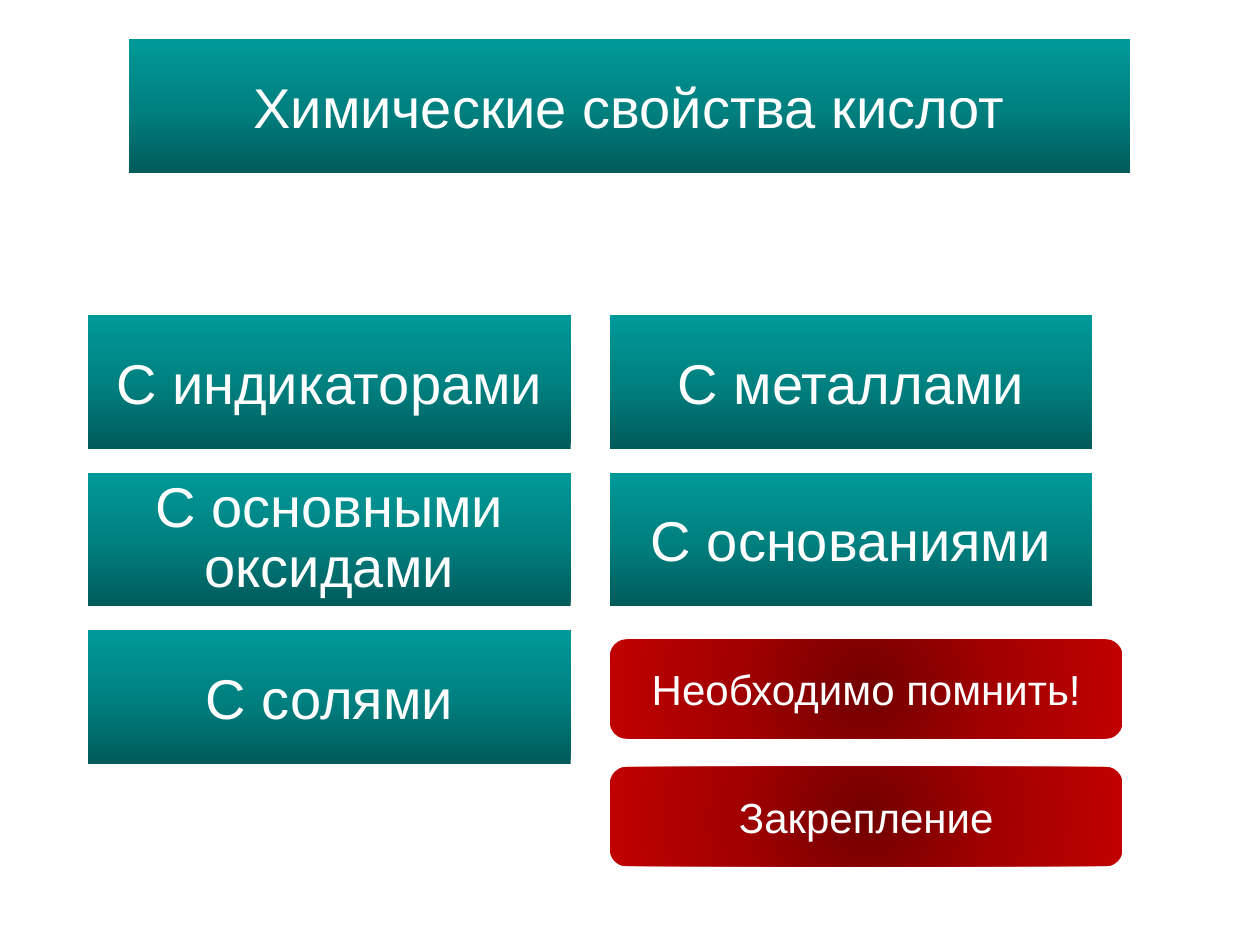
"""Build a menu slide on the chemical properties of acids."""
from pptx import Presentation, oxml, util as u
from pptx.dml.color import RGBColor
from pptx.enum import shapes, text
from pptx.oxml.ns import nsdecls

COLORS = {
    "text": "FFFFFF",
    "teal": ("005B5B", "008181", "009999"),
    "red": ("720000", "A20000", "C00000"),
}
LINEAR = '<a:lin ang="16200000" scaled="0"/>'
RADIAL = '<a:path path="circle"><a:fillToRect l="50000" t="50000" r="50000" b="50000"/></a:path>'


class MenuSlide:
    """Places panels by share of slide width and by sixths of slide height."""

    font = "Arial"
    rows = 6

    def __init__(self, deck):
        self.slide = deck.slides.add_slide(deck.slide_layouts[6])
        self.width = deck.slide_width
        self.row_height = deck.slide_height / self.rows

    def gradient(self, shape, palette, direction):
        stops = "".join(
            f'<a:gs pos="{index * 50000}"><a:srgbClr val="{color}"/></a:gs>'
            for index, color in enumerate(COLORS[palette])
        )
        fill = oxml.parse_xml(
            f'<a:gradFill {nsdecls("a")} rotWithShape="1">'
            f"<a:gsLst>{stops}</a:gsLst>{direction}</a:gradFill>"
        )
        shape._element.spPr.insert(2, fill)

    def panel(self, label, left, row, width, height, kind, palette, direction, size, spacing=None):
        shape = self.slide.shapes.add_shape(
            kind, int(left * self.width), int(row * self.row_height),
            int(width * self.width), int(height * self.row_height))
        shape.shadow.inherit = False
        shape.line.fill.background()
        self.gradient(shape, palette, direction)
        frame = shape.text_frame
        frame.text = label
        frame.word_wrap = True
        frame.vertical_anchor = text.MSO_ANCHOR.MIDDLE
        paragraph = frame.paragraphs[0]
        paragraph.alignment = text.PP_ALIGN.CENTER
        if spacing:
            paragraph.line_spacing = spacing
        font = paragraph.runs[0].font
        font.name, font.size = self.font, u.Pt(size)
        font.color.rgb = RGBColor.from_string(COLORS["text"])

    def topic(self, label, left, row, width=0.383, spacing=None):
        self.panel(label, left, row, width, 0.85, shapes.MSO_SHAPE.RECTANGLE,
                   "teal", LINEAR, 32, spacing)

    def button(self, label, left, row):
        self.panel(label, left, row, 0.407, 0.63, shapes.MSO_SHAPE.ROUNDED_RECTANGLE,
                   "red", RADIAL, 24)


def main():
    deck = Presentation()
    deck.slide_width, deck.slide_height = u.Inches(10), u.Inches(7.5)
    menu = MenuSlide(deck)
    columns = (0.07, 0.484)
    reactions = (
        ("С индикаторами", None), ("С металлами", None),
        ("С основными оксидами", 0.9), ("С основаниями", None),
        ("С солями", None),
    )
    menu.topic("Химические свойства кислот", 0.102, 0.25, width=0.795)
    for index, (reaction, spacing) in enumerate(reactions):
        row, column = divmod(index, len(columns))
        menu.topic(reaction, columns[column], 2 + row, spacing=spacing)
    for index, action in enumerate(("Необходимо помнить!", "Закрепление")):
        menu.button(action, columns[1], 4.06 + 0.81 * index)
    deck.save("out.pptx")


if __name__ == "__main__":
    main()
